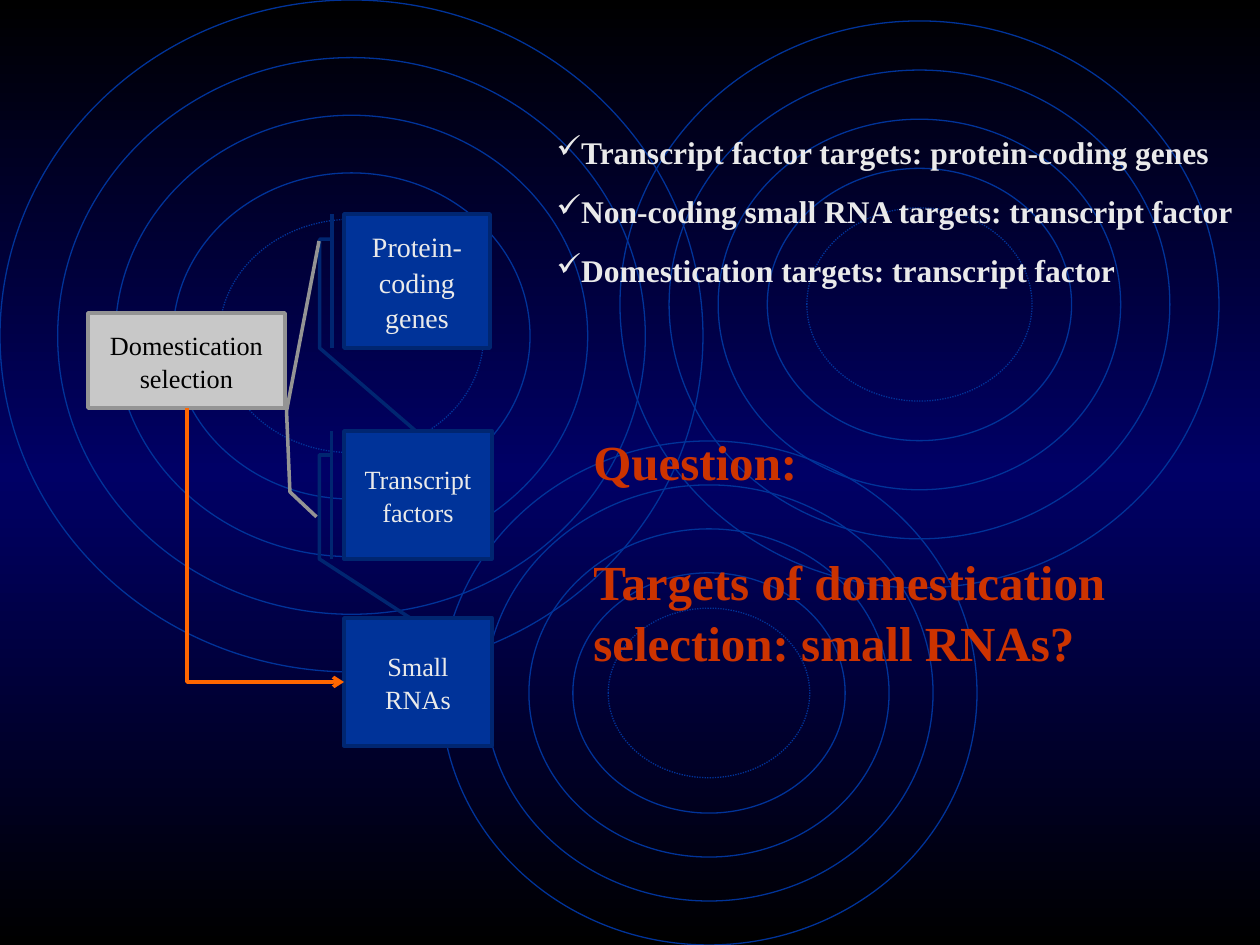
from copy import deepcopy

from pptx import Presentation
from pptx.dml.color import RGBColor
from pptx.enum.dml import MSO_LINE
from pptx.enum.shapes import MSO_CONNECTOR, MSO_SHAPE
from pptx.enum.text import MSO_ANCHOR, PP_ALIGN
from pptx.oxml.ns import qn
from pptx.oxml.xmlchemy import OxmlElement
from pptx.util import Pt

PX = 914400 // 126
FONT = "Times New Roman"
BLUE, DARK_BLUE, PALE = "003399", "002671", "EAEAEA"
GREY, DARK_GREY, ORANGE, RED = "C8C8C8", "949494", "FF6600", "CC3300"

# Ring insets as shares of the outer width
RING_INSETS = [0, 0.082, 0.164, 0.246, 0.312]


def color(hex_text):
    return RGBColor.from_string(hex_text)


def emu(*lengths):
    return [round(length * PX) for length in lengths]


def add_run(para, text, size, hex_text, bold=False):
    run = para.add_run()
    run.text = text
    run.font.name = FONT
    run.font.size = Pt(size)
    run.font.bold = bold
    run.font.color.rgb = color(hex_text)


def paint_background(page):
    fill = page.background.fill
    fill.gradient()
    fill.gradient_angle = 270
    stop_list = page.element.find(".//" + qn("a:gsLst"))
    stop_list.insert(1, deepcopy(stop_list[0]))
    for stop, place, shade in zip(fill.gradient_stops, (0, 0.5, 1),
                                  ("000000", "000066", "000000")):
        stop.position = place
        stop.color.rgb = color(shade)


def add_ripples(page, left, top, width, height):
    for share in RING_INSETS:
        inset = share * width
        ring = page.shapes.add_shape(MSO_SHAPE.OVAL, *emu(
            left + inset, top + inset, width - 2 * inset, height - 2 * inset))
        ring.shadow.inherit = False
        ring.fill.background()
        ring.line.color.rgb = color(BLUE)
        ring.line.width = Pt(0.75)
        if share == RING_INSETS[-1]:
            ring.line.dash_style = MSO_LINE.ROUND_DOT


def add_text_box(page, left, top, width, height):
    box = page.shapes.add_textbox(*emu(left, top, width, height))
    box.text_frame.word_wrap = True
    return box.text_frame


def add_findings(page, left, top, width, height, findings):
    frame = add_text_box(page, left, top, width, height)
    for index, finding in enumerate(findings):
        para = frame.add_paragraph() if index else frame.paragraphs[0]
        para.level = 1
        para.line_spacing = 1.56
        add_run(para, finding, 18, PALE, True)
        properties = para._p.get_or_add_pPr()
        properties.set("marL", "457200")
        properties.set("indent", "0")
        bullet = OxmlElement("a:buChar")
        bullet.set("char", "✓")
        properties.append(bullet)


def add_question(page, left, top, width, height, heading, question):
    frame = add_text_box(page, left, top, width, height)
    first, second = frame.paragraphs[0], frame.add_paragraph()
    second.space_before = Pt(33.5)
    for para, text in ((first, heading), (second, question)):
        para.line_spacing = 1.04
        add_run(para, text, 28, RED, True)


def add_node(page, kind, bounds, text, size, callout=(),
             fill=BLUE, line=DARK_BLUE, ink=PALE):
    node = page.shapes.add_shape(kind, *emu(*bounds))
    for index, value in enumerate(callout):
        node.adjustments[index] = value
    node.shadow.inherit = False
    node.fill.solid()
    node.fill.fore_color.rgb = color(fill)
    node.line.color.rgb = color(line)
    node.line.width = Pt(2)
    frame = node.text_frame
    frame.word_wrap = True
    frame.vertical_anchor = MSO_ANCHOR.MIDDLE
    para = frame.paragraphs[0]
    para.alignment = PP_ALIGN.CENTER
    para.line_spacing = 1.05
    add_run(para, text, size, ink)


def add_elbow_arrow(page, start_x, start_y, end_x, end_y):
    # One bend: down, then right; the frame is turned a quarter
    middle_x, middle_y = (start_x + end_x) / 2, (start_y + end_y) / 2
    half_width, half_height = (end_y - start_y) / 2, (end_x - start_x) / 2
    arrow = page.shapes.add_connector(MSO_CONNECTOR.ELBOW, *emu(
        middle_x + half_width, middle_y - half_height,
        middle_x - half_width, middle_y + half_height))
    arrow.line.color.rgb = color(ORANGE)
    arrow.line.width = Pt(2)
    properties = arrow._element.spPr
    properties.find(qn("a:xfrm")).set("rot", "16200000")
    properties.find(qn("a:prstGeom")).set("prst", "bentConnector2")
    tail = OxmlElement("a:tailEnd")
    tail.set("type", "arrow")
    properties.find(qn("a:ln")).append(tail)
    properties.append(OxmlElement("a:effectLst"))


def add_diagram(page, left, top):
    accent = MSO_SHAPE.LINE_CALLOUT_3_BORDER_AND_ACCENT_BAR
    bracket = [0.188, -0.083, 0.188, -0.167, 1, -0.167]
    column = left + 256
    add_node(page, accent, (column, top, 146, 134), "Protein-coding genes",
             16, bracket + [1.624, 0.497])
    add_node(page, accent, (column, top + 217, 148, 128), "Transcript factors",
             15, bracket + [1.458, 0.443])
    add_node(page, MSO_SHAPE.RECTANGLE, (column, top + 404, 148, 128),
             "Small RNAs", 15)
    add_node(page, MSO_SHAPE.LINE_CALLOUT_3, (left, top + 99, 197, 95),
             "Domestication selection", 15,
             [-0.758, 1.173, 1.033, 1.008, 1.883, 1.025, 2.146, 1.16],
             GREY, DARK_GREY, "000000")
    add_elbow_arrow(page, left + 99, top + 194, column, top + 468)


def main():
    deck = Presentation()
    deck.slide_width, deck.slide_height = emu(1260, 945)
    page = deck.slides.add_slide(deck.slide_layouts[6])

    # Backdrop
    paint_background(page)
    add_ripples(page, 0, 0, 703, 672)
    add_ripples(page, 441, 441, 536, 504)
    add_ripples(page, 620, 21, 599, 567)

    # Findings, diagram and question
    add_findings(page, 481, 106, 799, 178, [
        "Transcript factor targets: protein-coding genes",
        "Non-coding small RNA targets: transcript factor",
        "Domestication targets: transcript factor"])
    add_diagram(page, 88, 214)
    add_question(page, 581, 423, 615, 251, "Question:",
                 "Targets of domestication selection: small RNAs?")
    deck.save("out.pptx")


if __name__ == "__main__":
    main()
